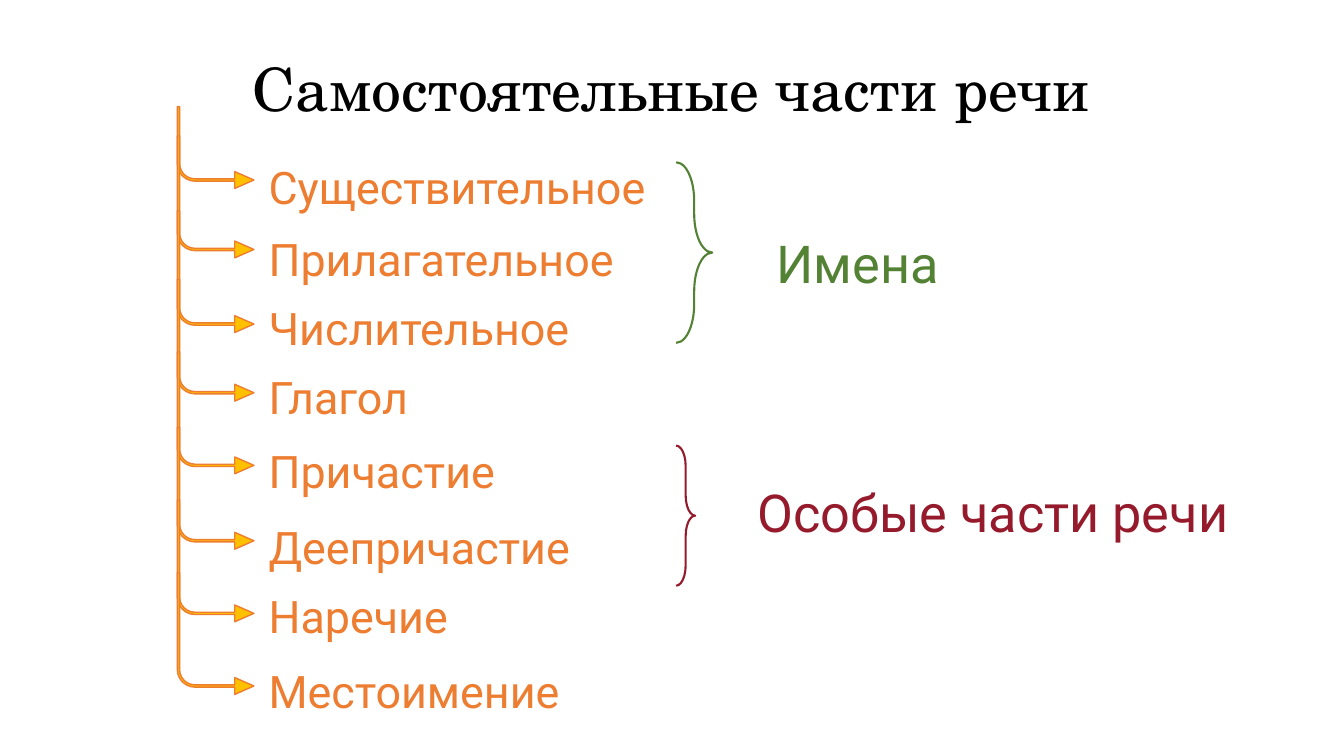
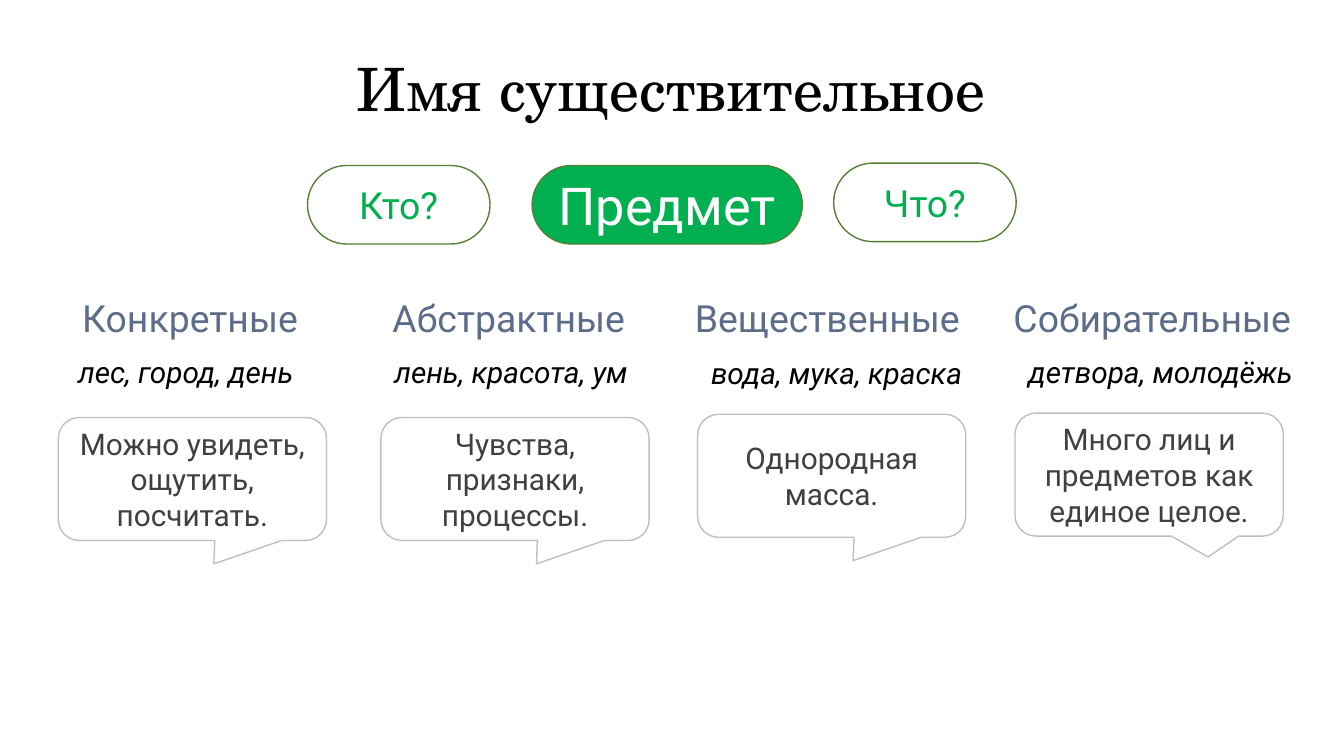
from dataclasses import dataclass

from pptx import Presentation
from pptx.dml.color import RGBColor
from pptx.enum.shapes import MSO_SHAPE
from pptx.enum.text import MSO_ANCHOR, MSO_AUTO_SIZE, PP_ALIGN
from pptx.util import Cm, Pt


@dataclass(frozen=True)
class Theme:
    title_font: str = "TeX Gyre Schola"
    text_font: str = "Roboto"
    title_size: Pt = Pt(42.7)
    group_size: Pt = Pt(37.3)
    part_size: Pt = Pt(32)
    heading_size: Pt = Pt(26.7)
    note_size: Pt = Pt(21.3)
    black: RGBColor = RGBColor.from_string("000000")
    white: RGBColor = RGBColor.from_string("FFFFFF")
    orange: RGBColor = RGBColor.from_string("ED7D31")
    gold: RGBColor = RGBColor.from_string("FFC000")
    dark_green: RGBColor = RGBColor.from_string("548235")
    green: RGBColor = RGBColor.from_string("00B050")
    crimson: RGBColor = RGBColor.from_string("951B2C")
    slate: RGBColor = RGBColor.from_string("5D6C89")
    grey: RGBColor = RGBColor.from_string("404040")
    light_grey: RGBColor = RGBColor.from_string("BFBFBF")


theme = Theme()
LABEL_HEIGHT = 1.85


def add_label(slide, text, left, top, width, size, color, anchor=MSO_ANCHOR.BOTTOM, italic=False):
    shape = slide.shapes.add_textbox(Cm(left), Cm(top), Cm(width), Cm(LABEL_HEIGHT))
    frame = shape.text_frame
    frame.word_wrap = True
    frame.vertical_anchor = anchor
    frame.margin_left = frame.margin_right = Cm(0.34)
    frame.margin_top = frame.margin_bottom = Cm(0.17)
    paragraph = frame.paragraphs[0]
    paragraph.text = text
    paragraph.line_spacing = 1.5
    paragraph.font.name = theme.text_font
    paragraph.font.size = size
    paragraph.font.color.rgb = color
    paragraph.font.italic = italic


def add_figure(slide, preset, box, adjustments, fill, line, line_width=1, text="", size=None, color=None):
    shape = slide.shapes.add_shape(preset, *[Cm(length) for length in box])
    shape.shadow.inherit = False
    for index, value in enumerate(adjustments):
        shape.adjustments[index] = value
    if fill is None:
        shape.fill.background()
    else:
        shape.fill.solid()
        shape.fill.fore_color.rgb = fill
    shape.line.color.rgb = line
    shape.line.width = Pt(line_width)
    if text:
        shape.text_frame.word_wrap = True
        shape.text_frame.vertical_anchor = MSO_ANCHOR.MIDDLE
        paragraph = shape.text_frame.paragraphs[0]
        paragraph.text = text
        paragraph.alignment = PP_ALIGN.CENTER
        paragraph.font.name = theme.text_font
        paragraph.font.size = size
        paragraph.font.color.rgb = color
    return shape


presentation = Presentation()
presentation.slide_width = Cm(33.87)
presentation.slide_height = Cm(19.05)

for title_text in ("Самостоятельные части речи", "Имя существительное"):
    slide = presentation.slides.add_slide(presentation.slide_layouts[5])
    title = slide.shapes.title
    title.left, title.top, title.width, title.height = Cm(3.56), Cm(1.42), Cm(26.72), Cm(1.85)
    frame = title.text_frame
    frame.auto_size = MSO_AUTO_SIZE.NONE
    frame.vertical_anchor = MSO_ANCHOR.BOTTOM
    frame.margin_top = frame.margin_bottom = Cm(0.17)
    paragraph = frame.paragraphs[0]
    paragraph.text = title_text
    paragraph.alignment = PP_ALIGN.CENTER
    paragraph.font.name = theme.title_font
    paragraph.font.size = theme.title_size
    paragraph.font.color.rgb = theme.black

parts_slide, noun_slide = presentation.slides

parts_of_speech = (
    ("Существительное", 3.43, 4.75),
    ("Прилагательное", 5.26, 6.5),
    ("Числительное", 6.99, 8.38),
    ("Глагол", 8.74, 10.11),
    ("Причастие", 10.59, 11.94),
    ("Деепричастие", 12.5, 13.84),
    ("Наречие", 14.25, 15.67),
    ("Местоимение", 16.15, 17.5),
)
TRUNK_TOP = 2.69
ARROW_HEIGHT = 3.07
for part, label_top, arrow_bottom in parts_of_speech:
    add_label(parts_slide, part, 6.43, label_top, 14.94, theme.part_size, theme.orange, MSO_ANCHOR.MIDDLE)
    arrow_top = max(TRUNK_TOP, arrow_bottom - ARROW_HEIGHT)
    arrow = add_figure(
        parts_slide, MSO_SHAPE.BENT_ARROW, (4.47, arrow_top, 1.93, arrow_bottom - arrow_top),
        (0.03, 0.11, 0.25, 0.23), theme.gold, theme.orange,
    )
    arrow.element.spPr.get_or_add_xfrm().set("flipV", "1")

groups = (
    ("Имена", theme.dark_green, (17.04, 4.09, 0.91, 4.55), (19.23, 5.74, 6.4)),
    ("Особые части речи", theme.crimson, (17.04, 11.23, 0.48, 3.53), (18.75, 11.99, 13.23)),
)
for group, color, brace_box, label_place in groups:
    add_figure(parts_slide, MSO_SHAPE.RIGHT_BRACE, brace_box, (1.07, 0.5), None, color, 1.5)
    add_label(parts_slide, group, *label_place, theme.group_size, color)

pills = (
    ("Предмет", (13.41, 4.17, 6.81, 1.98), theme.green, theme.group_size, theme.white),
    ("Кто?", (7.75, 4.17, 4.6, 1.98), theme.white, theme.heading_size, theme.green),
    ("Что?", (21.01, 4.11, 4.6, 1.98), theme.white, theme.heading_size, theme.green),
)
for text, box, fill, size, color in pills:
    add_figure(
        noun_slide, MSO_SHAPE.ROUNDED_RECTANGLE, box, (0.5,), fill, theme.dark_green,
        text=text, size=size, color=color,
    )

wide_tail = (0.08, 0.69, 0.17)
short_tail = (0.22, 0.67, 0.17)
noun_kinds = (
    ("Конкретные", 1.73, "лес, город, день", 1.63, 8.13,
     "Можно увидеть, ощутить, посчитать.", 1.47, 10.52, wide_tail),
    ("Абстрактные", 9.55, "лень, красота, ум", 9.6, 8.13,
     "Чувства, признаки, процессы.", 9.6, 10.52, wide_tail),
    ("Вещественные", 17.17, "вода, мука, краска", 17.58, 8.15,
     "Однородная масса.", 17.58, 10.44, wide_tail),
    ("Собирательные", 25.2, "детвора, молодёжь", 25.58, 8.13,
     "Много лиц и предметов как единое целое.", 25.58, 10.41, short_tail),
)
for heading, heading_left, examples, examples_left, examples_top, note, note_left, note_top, tail in noun_kinds:
    add_label(noun_slide, heading, heading_left, 6.88, 8.6, theme.heading_size, theme.slate)
    add_figure(
        noun_slide, MSO_SHAPE.ROUNDED_RECTANGULAR_CALLOUT, (note_left, note_top, 6.76, 3.1), tail,
        theme.white, theme.light_grey, text=note, size=theme.note_size, color=theme.grey,
    )
    add_label(noun_slide, examples, examples_left, examples_top, 7.7, theme.note_size, theme.black, italic=True)

presentation.save("out.pptx")
